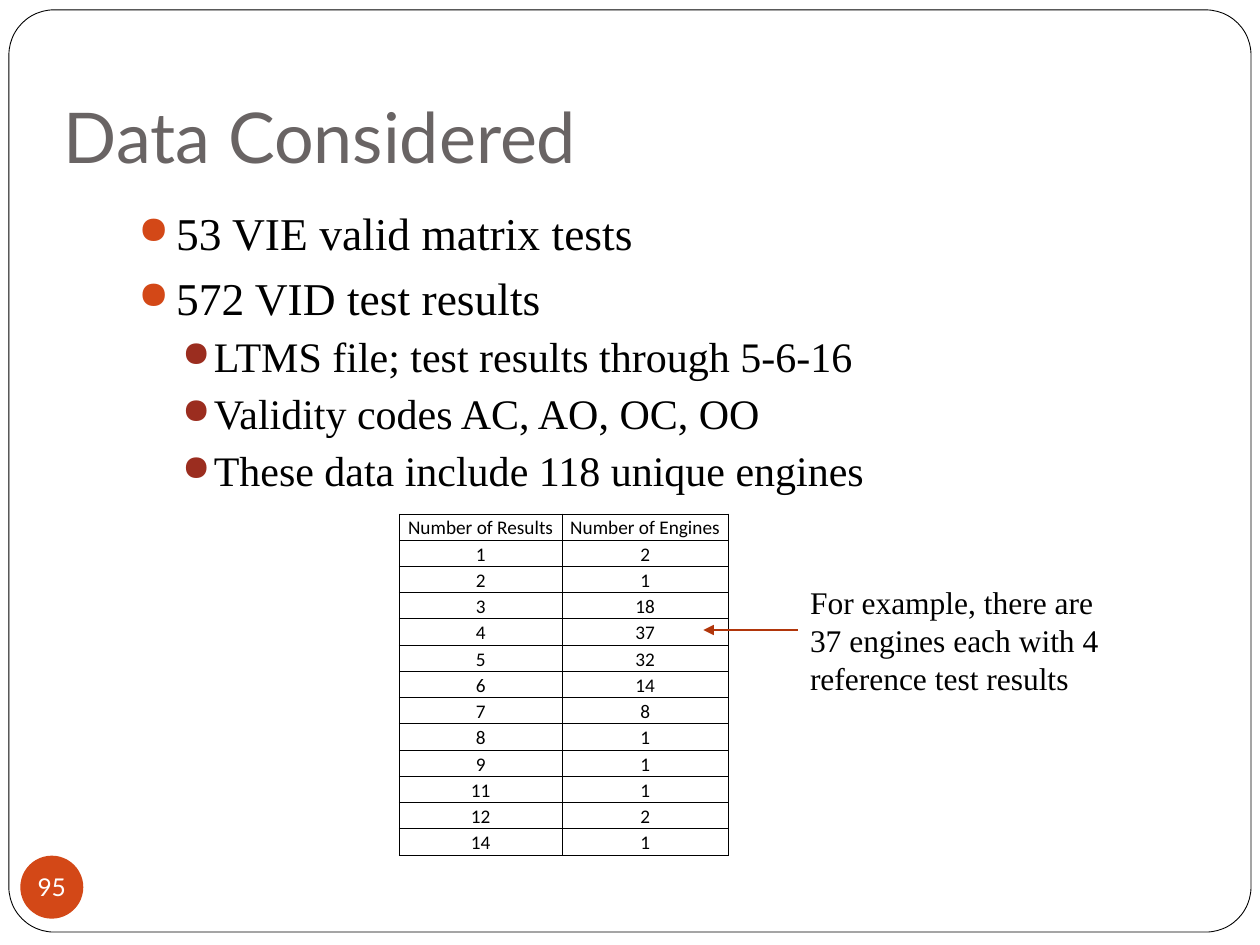
import pptx
import pptx.util
import pptx.dml.color
import pptx.enum.shapes
import pptx.enum.text
import pptx.oxml
import pptx.oxml.ns

Cm, Pt = pptx.util.Cm, pptx.util.Pt
RGB = pptx.dml.color.RGBColor
SHAPE = pptx.enum.shapes.MSO_SHAPE
ANCHOR = pptx.enum.text.MSO_ANCHOR
CENTER = pptx.enum.text.PP_ALIGN.CENTER

BLACK = RGB(0x00, 0x00, 0x00)
WHITE = RGB(0xFF, 0xFF, 0xFF)
GRAY = RGB(0x69, 0x64, 0x64)
ORANGE = RGB(0xD3, 0x48, 0x17)
RED = RGB(0x9B, 0x2D, 0x1F)
RUST = RGB(0xB1, 0x36, 0x0B)
SERIF = "Times New Roman"

POINTS = [
    (0, "53 VIE valid matrix tests"),
    (0, "572 VID test results"),
    (1, "LTMS file; test results through 5-6-16"),
    (1, "Validity codes AC, AO, OC, OO"),
    (1, "These data include 118 unique engines"),
]
# Per level: text size, space before, left margin, hang, bullet colour
LEVELS = [(26, 5.8, 0.76, 0.76, ORANGE), (24, 3.7, 1.52, 0.64, RED)]
HEADS = ("Number of Results", "Number of Engines")
COUNTS = [(1, 2), (2, 1), (3, 18), (4, 37), (5, 32), (6, 14),
          (7, 8), (8, 1), (9, 1), (11, 1), (12, 2), (14, 1)]


def add_xml(parent, xml):
    """Append a drawing element given as text."""
    space = pptx.oxml.ns.nsdecls("a")
    tag, rest = xml[:xml.index(" ")], xml[xml.index(" "):]
    parent.append(pptx.oxml.parse_xml(f"{tag} {space}{rest}"))


def style(para, font, size, color):
    for run in para.runs:
        run.font.name = font
        run.font.size = Pt(size)
        run.font.color.rgb = color


def add_text(slide, box, text, font, size, color):
    frame = slide.shapes.add_textbox(*map(Cm, box)).text_frame
    frame.word_wrap = True
    frame.text = text
    style(frame.paragraphs[0], font, size, color)
    return frame


def add_panel(slide, box):
    panel = slide.shapes.add_shape(SHAPE.ROUNDED_RECTANGLE, *map(Cm, box))
    panel.adjustments[0] = 0.049
    panel.shadow.inherit = False
    panel.fill.solid()
    panel.fill.fore_color.rgb = WHITE
    panel.line.color.rgb = BLACK
    panel.line.width = Pt(0.5)


def add_title(slide, box):
    frame = add_text(slide, box, "Data Considered", "Lato", 40, GRAY)
    frame.vertical_anchor = ANCHOR.BOTTOM
    frame.margin_bottom = Cm(0.25)


def add_list(slide, box):
    frame = add_text(slide, box, "\n".join(t for _, t in POINTS),
                     SERIF, 26, BLACK)
    for para, (level, _) in zip(frame.paragraphs, POINTS):
        size, space, left, hang, color = LEVELS[level]
        style(para, SERIF, size, BLACK)
        para.level = level
        para.space_before = Pt(space)
        props = para._p.get_or_add_pPr()
        props.set("marL", str(Cm(left)))
        props.set("indent", str(-Cm(hang)))
        add_xml(props, f'<a:buClr ><a:srgbClr val="{color}"/></a:buClr>')
        add_xml(props, '<a:buSzPct val="85000"/>')
        add_xml(props, '<a:buChar char="●"/>')


def add_badge(slide, box):
    badge = slide.shapes.add_shape(SHAPE.OVAL, *map(Cm, box))
    badge.shadow.inherit = False
    badge.fill.solid()
    badge.fill.fore_color.rgb = ORANGE
    badge.line.fill.background()
    frame = badge.text_frame
    frame.margin_left = frame.margin_right = 0
    frame.margin_top = frame.margin_bottom = 0
    frame.word_wrap = False
    frame.vertical_anchor = ANCHOR.MIDDLE
    frame.text = "95"
    frame.paragraphs[0].alignment = CENTER
    style(frame.paragraphs[0], "Lato", 14, WHITE)


def fill_cell(cell, text):
    cell.text = text
    cell.vertical_anchor = ANCHOR.BOTTOM
    cell.margin_left = cell.margin_right = cell.margin_top = Cm(0.03)
    cell.margin_bottom = 0
    para = cell.text_frame.paragraphs[0]
    para.alignment = CENTER
    style(para, "Calibri", 11, BLACK)
    props = cell._tc.get_or_add_tcPr()
    for side in "LRTB":
        add_xml(props, f'<a:ln{side} w="{Pt(0.5)}"><a:solidFill>'
                       f'<a:srgbClr val="{BLACK}"/></a:solidFill></a:ln{side}>')
    cell.fill.background()


def add_counts(slide, box):
    left, top, width, height = map(Cm, box)
    rows = [HEADS] + COUNTS
    table = slide.shapes.add_table(len(rows), 2, left, top,
                                   width, height).table
    table.first_row = table.horz_banding = False
    table.columns[0].width = Cm(3.28)
    table.columns[1].width = width - Cm(3.28)
    for r, values in enumerate(rows):
        table.rows[r].height = height // len(rows)
        for c, value in enumerate(values):
            fill_cell(table.cell(r, c), str(value))


def add_note(slide, box):
    add_text(slide, box, "For example, there are 37 engines each with 4 "
             "reference test results", SERIF, 18, BLACK)
    # Arrow from the note back to its table row
    left, y = Cm(box[0]), Cm(box[1] + 1.07)
    arrow = slide.shapes.add_connector(
        pptx.enum.shapes.MSO_CONNECTOR.STRAIGHT, left, y, left - Cm(1.9), y)
    arrow.line.color.rgb = RUST
    arrow.line.width = Pt(0.75)
    add_xml(arrow.line._get_or_add_ln(), '<a:tailEnd type="triangle"/>')
    add_xml(arrow._element.spPr, '<a:effectLst />')


def main():
    deck = pptx.Presentation()
    deck.slide_width, deck.slide_height = Cm(25.4), Cm(19.05)
    slide = deck.slides.add_slide(deck.slide_layouts[6])
    add_panel(slide, (0.18, 0.2, 25.04, 18.59))
    add_title(slide, (1.04, 0.64, 21.59, 3.18))
    add_list(slide, (2.54, 4.01, 21.59, 12.7))
    add_badge(slide, (0.41, 17.25, 1.27, 1.27))
    add_counts(slide, (8.05, 10.36, 6.63, 6.88))
    add_note(slide, (16.08, 11.63, 6.55, 2.57))
    deck.save("out.pptx")


if __name__ == "__main__":
    main()
